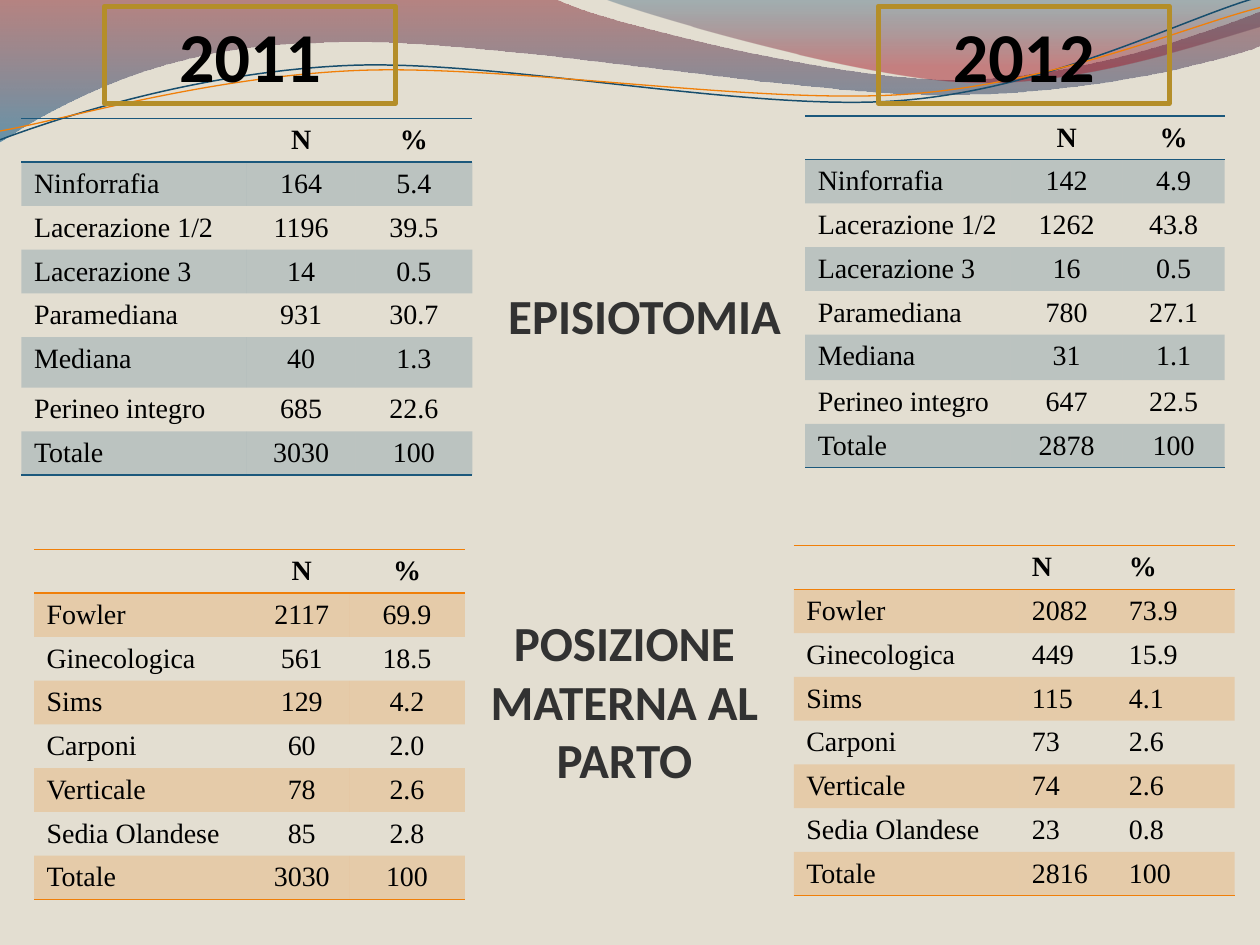
"""Build a slide comparing 2011 and 2012 delivery statistics."""
from lxml.etree import SubElement
from pptx import Presentation
from pptx.dml.color import RGBColor
from pptx.enum.shapes import MSO_SHAPE
from pptx.enum.text import MSO_ANCHOR, PP_ALIGN
from pptx.oxml.ns import qn
from pptx.util import Inches, Pt

BLUE, ORANGE, GOLD = "1B587C", "F07F09", "B48E29"
BLACK, GREY = "000000", "323232"
NO_STYLE = "{2D5ABB26-0587-4C30-8999-92F81FD0307C}"

EPISIOTOMY = ["Ninforrafia", "Lacerazione 1/2", "Lacerazione 3", "Paramediana",
              "Mediana", "Perineo integro", "Totale"]
POSITION = ["Fowler", "Ginecologica", "Sims", "Carponi", "Verticale",
            "Sedia Olandese", "Totale"]


def rgb(color):
    """Return the colour for a hex string."""
    return RGBColor.from_string(color)


def set_alpha(element, percents):
    """Give the colours inside an element their opacities in order."""
    for clr, percent in zip(list(element.iter(qn("a:srgbClr"))), percents):
        SubElement(clr, qn("a:alpha"), val=str(percent * 1000))


def style(p, size, color, bold, font, align):
    """Set the font and alignment of a paragraph."""
    p.alignment = align
    p.font.size, p.font.bold, p.font.name = Pt(size), bold, font
    p.font.color.rgb = rgb(color)


def add_curve(slide, start, segments, close):
    """Add an outline of straight (2 numbers) and curved (6 numbers) segments."""
    builder = slide.shapes.build_freeform(Inches(start[0]), Inches(start[1]))
    builder.add_line_segments([(Inches(seg[-2]), Inches(seg[-1])) for seg in segments],
                              close=close)
    sp = builder.convert_to_shape()
    sp.shadow.inherit = False
    for step, seg in zip(list(sp._element.iter(qn("a:lnTo"))), segments):
        if len(seg) == 6:
            step.tag = qn("a:cubicBezTo")
            for i in (0, 1):
                x, y = Inches(seg[2 * i]) - sp.left, Inches(seg[2 * i + 1]) - sp.top
                step.insert(i, SubElement(step, qn("a:pt"), x=str(x), y=str(y)))
    return sp


def add_wave(slide, start, segments, stops):
    """Add a filled wave with a translucent vertical gradient."""
    sp = add_curve(slide, start, segments, True)
    sp.fill.gradient()
    sp.fill.gradient_angle = 270
    for stop, (position, color, _) in zip(sp.fill.gradient_stops, stops):
        stop.position = position
        stop.color.rgb = rgb(color)
    set_alpha(sp._element.spPr, [alpha for _, _, alpha in stops])
    sp.line.fill.background()


def add_strand(slide, start, segments, color, width):
    """Add a thin curved line."""
    sp = add_curve(slide, start, segments, False)
    sp.fill.background()
    sp.line.color.rgb = rgb(color)
    sp.line.width = Pt(width)


def add_border(cell, side, color):
    """Draw one edge of a cell."""
    ln = SubElement(cell._tc.get_or_add_tcPr(), qn(f"a:{side}"), w=str(Pt(1)))
    SubElement(SubElement(ln, qn("a:solidFill")), qn("a:srgbClr"), val=color)


def fill_cell(cell, text, header, last, banded, color, align):
    """Write one cell with its rules and band."""
    if header:
        add_border(cell, "lnT", color)
    if header or last:
        add_border(cell, "lnB", color)
    if banded:
        cell.fill.solid()
        cell.fill.fore_color.rgb = rgb(color)
        set_alpha(cell._tc.tcPr.find(qn("a:solidFill")), [20])
    else:
        cell.fill.background()
    if text:
        cell.text = text
        style(cell.text_frame.paragraphs[0], 16, BLACK, header, "Times New Roman", align)
    else:
        cell.margin_top = cell.margin_bottom = 0


def add_stats(slide, left, top, widths, labels, counts, shares, color,
              align=PP_ALIGN.CENTER, tall=None):
    """Add a banded table of counts and percentages."""
    rows = [("", "N", "%"), *zip(labels, counts.split(), shares.split())]
    height = 0.33
    frame = slide.shapes.add_table(len(rows), 3, Inches(left), Inches(top),
                                   Inches(sum(widths)), Inches(height * len(rows)))
    table = frame.table
    table._tbl.tblPr.find(qn("a:tableStyleId")).text = NO_STYLE
    for col, width in zip(table.columns, widths):
        col.width = Inches(width)
    for i, row in enumerate(rows):
        table.rows[i].height = Inches(height)
        for j, text in enumerate(row):
            fill_cell(table.cell(i, j), text, i == 0, i == len(rows) - 1, i % 2 == 1,
                      color, align if j else PP_ALIGN.LEFT)
    if tall:
        table.rows[5].height = Inches(tall)


def add_heading(slide, top, height, left, text):
    """Add a topic heading between the tables."""
    sp = slide.shapes.add_textbox(Inches(left), Inches(top), Inches(2.91), Inches(height))
    tf = sp.text_frame
    tf.word_wrap = True
    tf.vertical_anchor = MSO_ANCHOR.BOTTOM
    tf.margin_left = tf.margin_right = tf.margin_bottom = 0
    tf.text = text
    style(tf.paragraphs[0], 28, GREY, True, "Calibri", PP_ALIGN.CENTER)


def add_year(slide, left, year):
    """Add a framed year."""
    sp = slide.shapes.add_shape(MSO_SHAPE.RECTANGLE, Inches(left), Inches(0.05),
                                Inches(2.31), Inches(0.77))
    sp.shadow.inherit = False
    sp.fill.background()
    sp.line.color.rgb = rgb(GOLD)
    sp.line.width = Pt(3)
    tf = sp.text_frame
    tf.vertical_anchor = MSO_ANCHOR.TOP
    tf.text = year
    style(tf.paragraphs[0], 40, BLACK, True, "Calibri", PP_ALIGN.CENTER)


def add_waves(slide):
    """Add the decoration along the top edge."""
    add_wave(slide, (0, -0.01),
             [(4.4, -0.01), (4.76, 0.17, 6.64, 0.63, 7.58, 0.63),
              (8.53, 0.63, 9.58, 0.26, 10, 0.09), (10.01, 0.36),
              (9.83, 0.44, 8.7, 0.76, 7.46, 0.75), (6.22, 0.75, 3.82, 0.28, 2.57, 0.34),
              (1.29, 0.35, 0.46, 0.83, -0.01, 1.13)],
             [(0, "7E1621", 45), (1, "005689", 55)])
    add_wave(slide, (4.79, -0.01),
             [(5.09, 0.11, 6.82, 0.62, 7.69, 0.65), (8.56, 0.69, 9.61, 0.32, 10, 0.21),
              (10, 0)],
             [(0, "094467", 30), (0.8, "A10F1F", 45)])
    add_strand(slide, (0, 1.11),
               [(0.48, 0.93, 1.58, 0.57, 2.77, 0.52), (3.95, 0.47, 5.93, 0.89, 7.13, 0.8),
                (8.33, 0.71, 9.38, 0.15, 9.98, -0.02)], "184E6D", 0.85)
    add_strand(slide, (0, 1.04),
               [(0.47, 0.96, 1.64, 0.61, 2.83, 0.56), (4.03, 0.51, 5.97, 0.83, 7.17, 0.75),
                (8.36, 0.67, 9.41, 0.21, 10, 0.06)], ORANGE, 0.75)


def main():
    """Build and save the slide."""
    prs = Presentation()
    prs.slide_width, prs.slide_height = Inches(10), Inches(7.5)
    s = prs.slides.add_slide(prs.slide_layouts[6])
    s.background.fill.solid()
    s.background.fill.fore_color.rgb = rgb("E3DED1")
    add_waves(s)
    add_stats(s, 6.39, 0.92, (1.63, 0.89, 0.81), EPISIOTOMY,
              "142 1262 16 780 31 647 2878", "4.9 43.8 0.5 27.1 1.1 22.5 100", BLUE, tall=0.36)
    add_stats(s, 0.17, 0.94, (1.79, 0.86, 0.93), EPISIOTOMY,
              "164 1196 14 931 40 685 3030", "5.4 39.5 0.5 30.7 1.3 22.6 100", BLUE, tall=0.4)
    add_stats(s, 0.27, 4.36, (1.75, 0.75, 0.92), POSITION,
              "2117 561 129 60 78 85 3030", "69.9 18.5 4.2 2.0 2.6 2.8 100", ORANGE)
    add_stats(s, 6.3, 4.33, (1.79, 0.77, 0.94), POSITION,
              "2082 449 115 73 74 23 2816", "73.9 15.9 4.1 2.6 2.6 0.8 100", ORANGE,
              align=PP_ALIGN.LEFT)
    add_heading(s, 1.94, 0.79, 3.66, "EPISIOTOMIA")
    add_heading(s, 4.77, 1.49, 3.5, "POSIZIONE MATERNA AL PARTO")
    add_year(s, 6.97, "2012")
    add_year(s, 0.83, "2011")
    prs.save("out.pptx")


if __name__ == "__main__":
    main()
